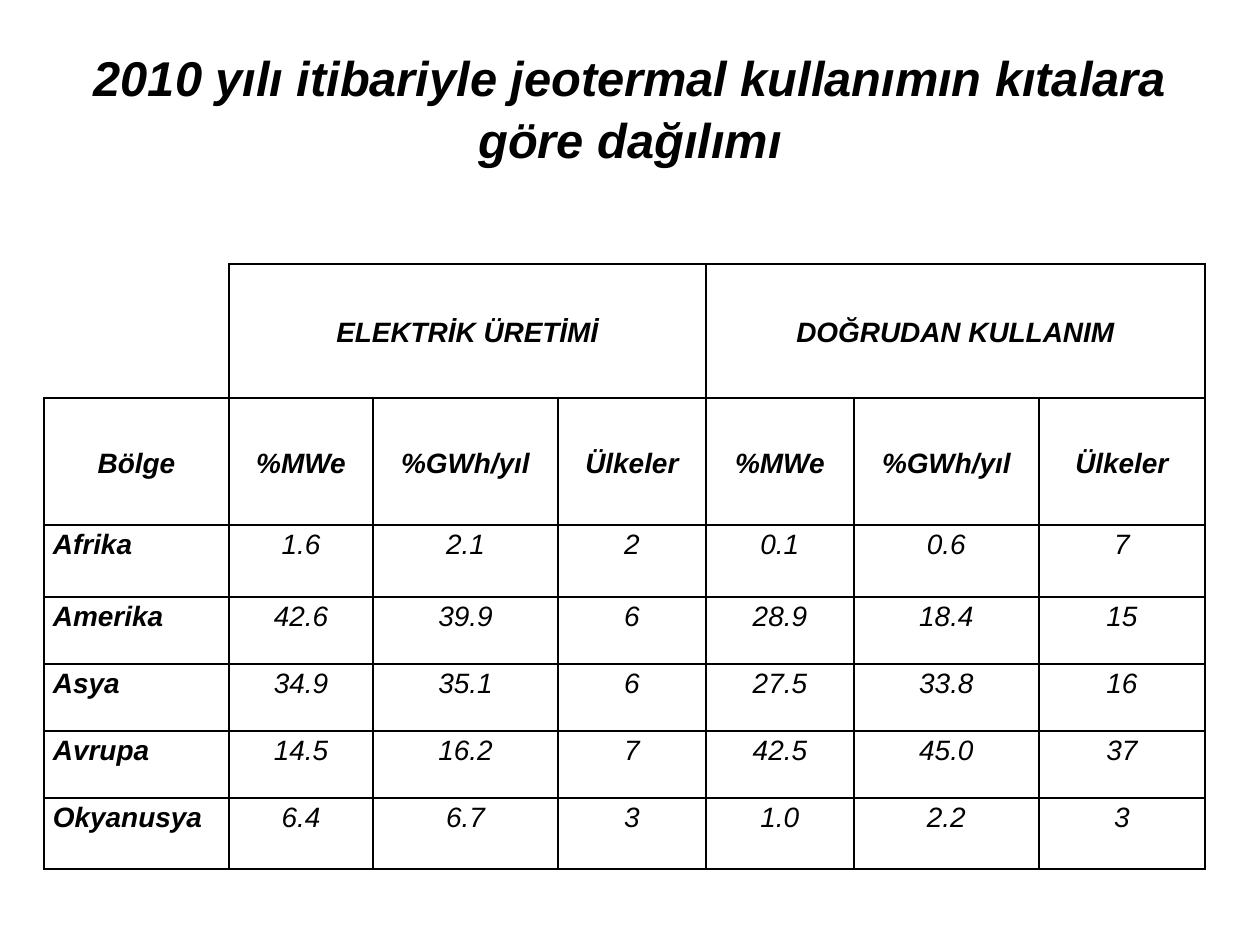
from lxml import etree
from pptx import Presentation
from pptx.dml.color import RGBColor
from pptx.enum.text import MSO_ANCHOR, MSO_AUTO_SIZE, PP_ALIGN
from pptx.oxml.ns import qn
from pptx.util import Pt

MIDDLE, TOP = MSO_ANCHOR.MIDDLE, MSO_ANCHOR.TOP
CENTER, LEFT = PP_ALIGN.CENTER, PP_ALIGN.LEFT
NO_FIT = MSO_AUTO_SIZE.NONE

PX = 914400 // 126
FONT = "Arial"
COLORS = {"ink": "000000", "page": "FFFFFF"}

TITLE = "2010 yılı itibariyle jeotermal kullanımın kıtalara göre dağılımı"
GROUPS = {1: "ELEKTRİK ÜRETİMİ", 4: "DOĞRUDAN KULLANIM"}
SPAN = 3
HEADS = ["Bölge"] + ["%MWe", "%GWh/yıl", "Ülkeler"] * 2
REGIONS = [
    ["Afrika", "1.6", "2.1", "2", "0.1", "0.6", "7"],
    ["Amerika", "42.6", "39.9", "6", "28.9", "18.4", "15"],
    ["Asya", "34.9", "35.1", "6", "27.5", "33.8", "16"],
    ["Avrupa", "14.5", "16.2", "7", "42.5", "45.0", "37"],
    ["Okyanusya", "6.4", "6.7", "3", "1.0", "2.2", "3"],
]
WIDTHS = [185, 144, 185, 148, 148, 185, 166]
HEIGHTS = [134, 127, 72, 67, 67, 67, 71]


def px(count):
    return count * PX


def style(para, size, bold, align, gap):
    para.alignment = align
    para.line_spacing = gap
    for run in para.runs:
        font = run.font
        font.name, font.size = FONT, Pt(size)
        font.bold, font.italic = bold, True
        font.color.rgb = RGBColor.from_string(COLORS["ink"])


def add_title(slide):
    title = slide.shapes.title
    title.left, title.top = px(63), px(38)
    title.width, title.height = px(1134), px(157)
    frame = title.text_frame
    frame.text = TITLE
    frame.word_wrap = True
    frame.auto_size = NO_FIT
    frame.vertical_anchor = MIDDLE
    frame.margin_bottom = px(26)
    style(frame.paragraphs[0], 27.9, True, CENTER, 1.05)


def draw_edges(cell, shown):
    """Rule the sides named in shown and clear the others."""
    props = cell._tc.get_or_add_tcPr()
    for side in "LRTB":
        line = etree.SubElement(props, qn(f"a:ln{side}"), w=str(Pt(1)))
        if side in shown:
            fill = etree.SubElement(line, qn("a:solidFill"))
            etree.SubElement(fill, qn("a:srgbClr"), val=COLORS["ink"])
        else:
            etree.SubElement(line, qn("a:noFill"))


def fill_cell(cell, text, bold, align, anchor):
    cell.text_frame.text = text
    cell.vertical_anchor = anchor
    cell.margin_left = cell.margin_right = px(9)
    cell.margin_top = cell.margin_bottom = 0
    style(cell.text_frame.paragraphs[0], 16, bold, align, 1.15)


def add_table(slide):
    frame = slide.shapes.add_table(
        len(HEIGHTS), len(WIDTHS), px(44), px(264),
        px(sum(WIDTHS)), px(sum(HEIGHTS)))
    table = frame.table
    table.first_row = table.horz_banding = False
    for col, width in zip(table.columns, WIDTHS):
        col.width = px(width)
    for row, height in zip(table.rows, HEIGHTS):
        row.height = px(height)

    for r in range(len(HEIGHTS)):
        for c in range(len(WIDTHS)):
            cell = table.cell(r, c)
            draw_edges(cell, "RB" if r == c == 0 else "LRTB")
            cell.fill.background()

    for c, text in GROUPS.items():
        cell = table.cell(0, c)
        cell.merge(table.cell(0, c + SPAN - 1))
        fill_cell(cell, text, True, CENTER, MIDDLE)
    for c, text in enumerate(HEADS):
        fill_cell(table.cell(1, c), text, True, CENTER, MIDDLE)
    for r, region in enumerate(REGIONS, 2):
        for c, text in enumerate(region):
            first = c == 0
            align = LEFT if first else CENTER
            fill_cell(table.cell(r, c), text, first, align, TOP)


def main():
    deck = Presentation()
    deck.slide_width, deck.slide_height = px(1260), px(945)
    slide = deck.slides.add_slide(deck.slide_layouts[5])
    back = slide.background.fill
    back.solid()
    back.fore_color.rgb = RGBColor.from_string(COLORS["page"])
    add_title(slide)
    add_table(slide)
    deck.save("out.pptx")


if __name__ == "__main__":
    main()
